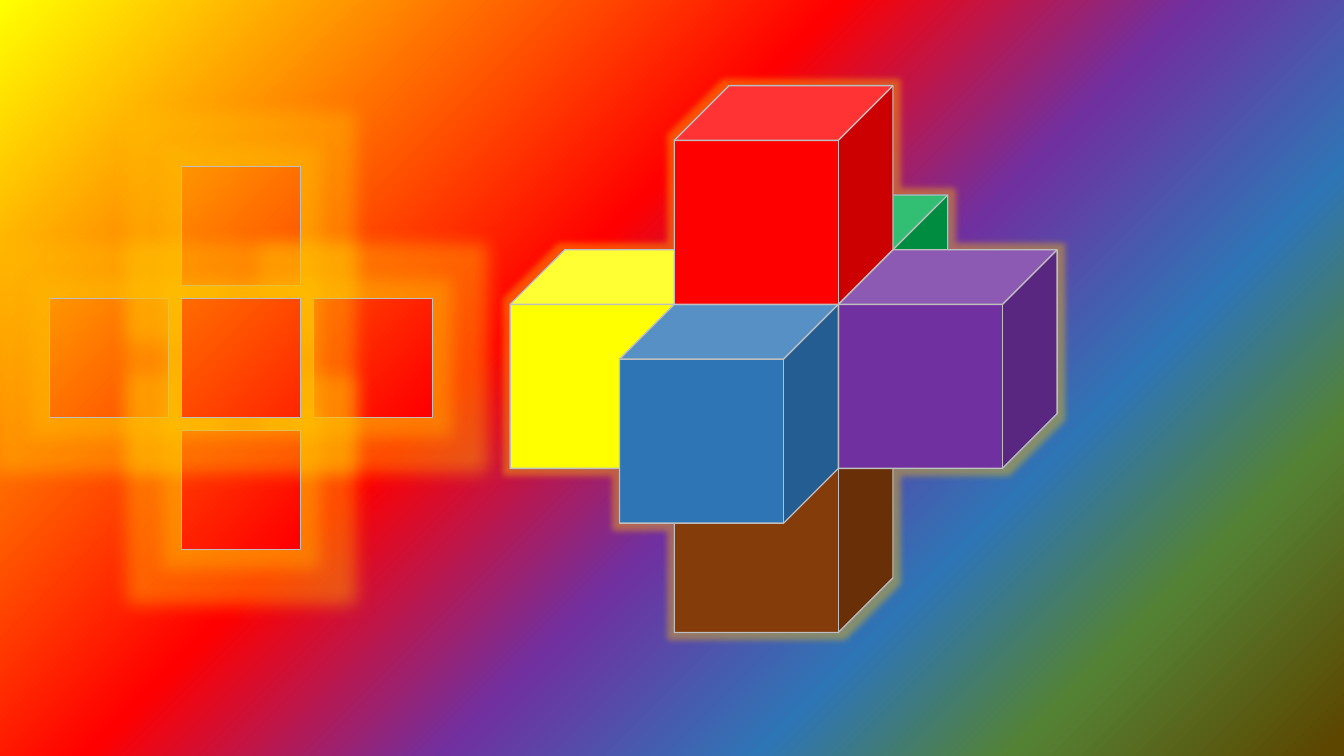
"""Build a slide with a cross of squares beside a cross of coloured cubes."""
from dataclasses import dataclass

from lxml.etree import SubElement
from pptx import Presentation
from pptx.dml.color import RGBColor
from pptx.enum.shapes import MSO_SHAPE
from pptx.oxml import parse_xml
from pptx.oxml.ns import nsdecls, qn
from pptx.util import Inches, Pt


@dataclass(frozen=True)
class Theme:
    """Hold the colours and line width of the slide."""
    rainbow: tuple = ((0, "FFFF00"), (40, "FF0000"), (57, "7030A0"),
                      (72, "2E75B6"), (84, "548235"), (99, "5C4600"))
    edge: str = "BFBFBF"
    outline: str = "325491"
    glow: str = "FFC000"
    line_width: float = 1
    square_glow: float = 26
    cube_glow: float = 9


@dataclass(frozen=True)
class Grid:
    """Turn columns and rows into slide positions, in inches."""
    left: float
    top: float
    pitch: float

    def place(self, column, row):
        """Return the position of a grid point."""
        return (Inches(self.left + column * self.pitch),
                Inches(self.top + row * self.pitch))


THEME = Theme()
CUBE_GRID = Grid(5.06, 0.85, 0.5425)
CUBE_SIZE = 4 * CUBE_GRID.pitch
SQUARE_GRID = Grid(0.49, 1.65, 1.31)
SQUARE_SIZE = 1.18

CUBES = ((3, 6, "843C0B"), (0, 3, "FFFF00"), (4, 2, "00B050"),
         (6, 3, "7030A0"), (2, 4, "2E75B6"), (3, 0, "FF0000"))
SQUARES = ((0, 1), (1, 0), (2, 1), (1, 2), (1, 1))
CUBES_OUTLINE = ((4, 0), (7, 0), (7, 2), (8, 2), (8, 3), (10, 3), (10, 6),
                 (9, 7), (7, 7), (7, 9), (6, 10), (3, 10), (3, 8), (2, 8),
                 (2, 7), (0, 7), (0, 4), (1, 3), (3, 3), (3, 1))


def set_background(slide):
    """Fill the slide with the rainbow, starting from the top left corner."""
    stops = "".join(
        f'<a:gs pos="{percent * 1000}"><a:srgbClr val="{color}"/></a:gs>'
        for percent, color in THEME.rainbow)
    background = parse_xml(
        f'<p:bg {nsdecls("p", "a")}><p:bgPr><a:gradFill rotWithShape="1">'
        f'<a:gsLst>{stops}</a:gsLst><a:path path="circle">'
        '<a:fillToRect r="100000" b="100000"/></a:path></a:gradFill>'
        '<a:effectLst/></p:bgPr></p:bg>')
    slide.element.cSld.insert(0, background)


def set_line(shape, color):
    """Give a shape a thin line and no shadow."""
    shape.shadow.inherit = False
    shape.line.color.rgb = RGBColor.from_string(color)
    shape.line.width = Pt(THEME.line_width)


def add_glow(shape, radius):
    """Surround a shape with a translucent glow."""
    effects = shape.element.spPr.find(qn("a:effectLst"))
    glow = SubElement(effects, qn("a:glow"), rad=str(Pt(radius)))
    color = SubElement(glow, qn("a:srgbClr"), val=THEME.glow)
    SubElement(color, qn("a:alpha"), val="40000")


def add_cubes_outline(slide):
    """Draw the glowing outline behind the cubes."""
    points = [CUBE_GRID.place(*point) for point in CUBES_OUTLINE]
    builder = slide.shapes.build_freeform(*points[0])
    builder.add_line_segments(points[1:], close=True)
    shape = builder.convert_to_shape()
    shape.fill.background()
    set_line(shape, THEME.outline)
    add_glow(shape, THEME.cube_glow)


def add_cube(slide, column, row, color):
    """Draw one coloured cube on the cube grid."""
    size = Inches(CUBE_SIZE)
    shape = slide.shapes.add_shape(
        MSO_SHAPE.CUBE, *CUBE_GRID.place(column, row), size, size)
    shape.fill.solid()
    shape.fill.fore_color.rgb = RGBColor.from_string(color)
    set_line(shape, THEME.edge)


def add_square(slide, column, row):
    """Draw one glowing square that shows the slide background."""
    size = Inches(SQUARE_SIZE)
    shape = slide.shapes.add_shape(
        MSO_SHAPE.RECTANGLE, *SQUARE_GRID.place(column, row), size, size)
    shape.element.set("useBgFill", "1")
    set_line(shape, THEME.edge)
    add_glow(shape, THEME.square_glow)


def main():
    """Build and save the slide."""
    presentation = Presentation()
    presentation.slide_width = Inches(13.33)
    presentation.slide_height = Inches(7.5)
    slide = presentation.slides.add_slide(presentation.slide_layouts[6])
    set_background(slide)
    add_cubes_outline(slide)
    for column, row, color in CUBES:
        add_cube(slide, column, row, color)
    for column, row in SQUARES:
        add_square(slide, column, row)
    presentation.save("out.pptx")


if __name__ == "__main__":
    main()
